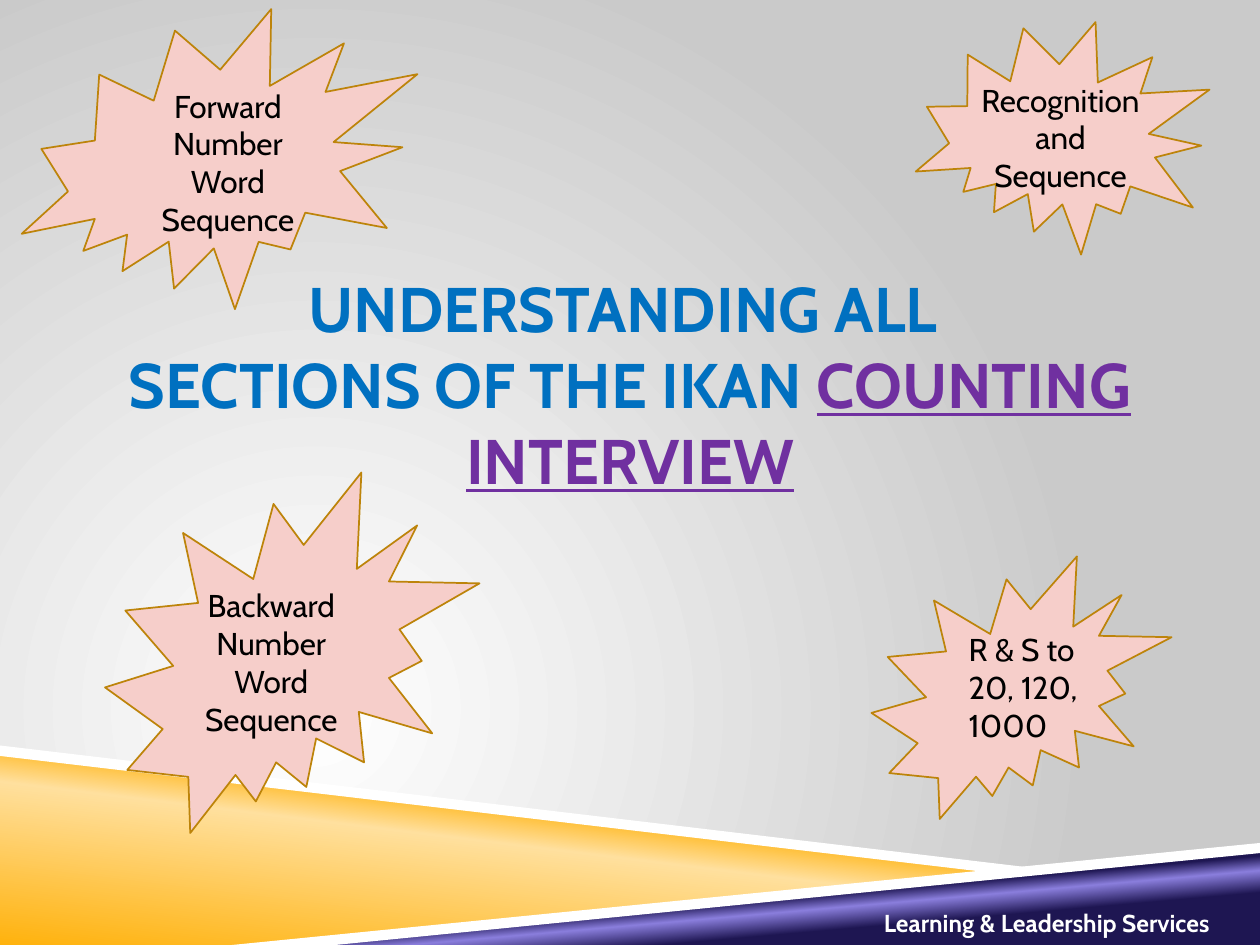
from typing import NamedTuple

from lxml.etree import SubElement
from pptx import Presentation
from pptx.dml.color import RGBColor
from pptx.enum.shapes import MSO_SHAPE
from pptx.enum.text import MSO_ANCHOR, MSO_AUTO_SIZE, PP_ALIGN
from pptx.oxml import parse_xml
from pptx.oxml.ns import nsdecls, qn
from pptx.util import Pt

FONT = "Cabin"
HEX = {
    "white": "FFFFFF", "grey": "CACACA", "gold": "FFB20D", "cream": "FFE09E",
    "navy": "1E1652", "lilac": "8B7FDD", "blue": "0070C0", "purple": "7030A0",
    "pink": "F6CECA", "bronze": "BD840A", "black": "000000",
}


class Box(NamedTuple):
    left: float
    top: float
    width: float
    height: float


class Band(NamedTuple):
    points: list
    stops: list
    angle: int = 0


class Burst(NamedTuple):
    box: Box
    turn: float = 0


class Label(NamedTuple):
    text: str
    box: Box
    align: PP_ALIGN = PP_ALIGN.CENTER
    size: int = 18
    color: str = "black"
    bold: bool = False


BANDS = [
    Band([(0, 430), (570.5, 498.5), (144, 540), (0, 540)],
         [(0, "gold"), (52, "cream"), (66, "gold")], 277),
    Band([(142.5, 540), (720, 484), (720, 540)],
         [(28, "navy"), (40, "lilac"), (48, "navy")], 265),
    Band([(0, 426), (0, 432), (569, 499), (599, 497)], [(0, "white")]),
    Band([(720, 481.7), (132.5, 540), (191.5, 540), (720, 487.5)], [(0, "white")]),
]
BURSTS = [
    Burst(Box(498, 318, 171.5, 150)),
    Burst(Box(60, 270, 214, 206)),
    Burst(Box(537, -0.5, 148.5, 160.5), 51.5),
    Burst(Box(43.5, -21.5, 174, 230.5), 49),
]
FOOTER = Label("Learning & Leadership Services", Box(498, 515.5, 222, 24.5),
               PP_ALIGN.LEFT, 14, "white", True)
LABELS = [
    Label("Recognition and Sequence", Box(552.5, 42.5, 107, 72.5)),
    Label("Forward Number Word Sequence", Box(79, 46, 102.5, 94.5)),
    Label("Backward Number Word Sequence", Box(100, 331.5, 110, 94.5)),
    Label("R & S to 20, 120, 1000", Box(546.5, 356.5, 86.5, 72.5), PP_ALIGN.LEFT),
]


def tone(name: str) -> RGBColor:
    return RGBColor.from_string(HEX[name])


def place(box: Box) -> list:
    return [Pt(side) for side in box]


def blend(props, stops: list, angle: int = 0, focus: tuple = ()) -> None:
    grad = parse_xml(f'<a:gradFill {nsdecls("a")} rotWithShape="1"><a:gsLst/></a:gradFill>')
    for spot, name in stops:
        stop = SubElement(grad[0], qn("a:gs"), pos=str(spot * 1000))
        SubElement(stop, qn("a:srgbClr"), val=HEX[name])
    if focus:
        route = SubElement(grad, qn("a:path"), {"path": "circle"})
        sides = {side: str(part * 1000) for side, part in zip("ltrb", focus)}
        SubElement(route, qn("a:fillToRect"), sides)
    else:
        SubElement(grad, qn("a:lin"), ang=str(angle * 60000), scaled="0")
    props.replace(props.find(qn("a:solidFill")), grad)


def draw_back(slide) -> None:
    fill = slide.background.fill
    fill.solid()
    fill.fore_color.rgb = tone("grey")
    props = slide.element.find(".//" + qn("p:bgPr"))
    blend(props, [(0, "white"), (100, "grey")], focus=(50, 100, 100, 50))


def draw_band(slide, band: Band) -> None:
    spots = [(Pt(x), Pt(y)) for x, y in band.points]
    pen = slide.shapes.build_freeform(*spots[0], scale=1.0)
    pen.add_line_segments(spots[1:], close=True)
    shape = pen.convert_to_shape()
    shape.shadow.inherit = False
    shape.line.fill.background()
    shape.fill.solid()
    shape.fill.fore_color.rgb = tone(band.stops[0][1])
    if len(band.stops) > 1:
        blend(shape.element.spPr, band.stops, band.angle)


def draw_burst(slide, burst: Burst) -> None:
    shape = slide.shapes.add_shape(MSO_SHAPE.EXPLOSION2, *place(burst.box))
    shape.rotation = burst.turn
    shape.shadow.inherit = False
    shape.fill.solid()
    shape.fill.fore_color.rgb = tone("pink")
    shape.line.color.rgb = tone("bronze")
    shape.line.width = Pt(1)


def style(run, size: int, color: str, bold: bool) -> None:
    run.font.name = FONT
    run.font.size = Pt(size)
    run.font.bold = bold
    run.font.color.rgb = tone(color)


def draw_label(slide, label: Label):
    frame = slide.shapes.add_textbox(*place(label.box)).text_frame
    frame.word_wrap = True
    frame.auto_size = MSO_AUTO_SIZE.SHAPE_TO_FIT_TEXT
    frame.text = label.text
    line = frame.paragraphs[0]
    line.alignment = label.align
    for run in line.runs:
        style(run, label.size, label.color, label.bold)
    return frame


def draw_title(slide) -> None:
    words = "UNDERSTANDING ALL \vSECTIONS OF THE IKAN "
    label = Label(words, Box(36, 150, 648, 138), size=36, color="blue", bold=True)
    frame = draw_label(slide, label)
    frame.auto_size = MSO_AUTO_SIZE.NONE
    frame.vertical_anchor = MSO_ANCHOR.MIDDLE
    frame.margin_left = frame.margin_right = Pt(0)
    run = frame.paragraphs[0].add_run()
    run.text = "COUNTING INTERVIEW"
    style(run, 36, "purple", True)
    run.font.underline = True


def main() -> None:
    deck = Presentation()
    deck.slide_width, deck.slide_height = Pt(720), Pt(540)
    slide = deck.slides.add_slide(deck.slide_layouts[6])
    draw_back(slide)
    for band in BANDS:
        draw_band(slide, band)
    draw_title(slide)
    draw_label(slide, FOOTER)
    for burst in BURSTS:
        draw_burst(slide, burst)
    for label in LABELS:
        draw_label(slide, label)
    deck.save("out.pptx")


if __name__ == "__main__":
    main()
